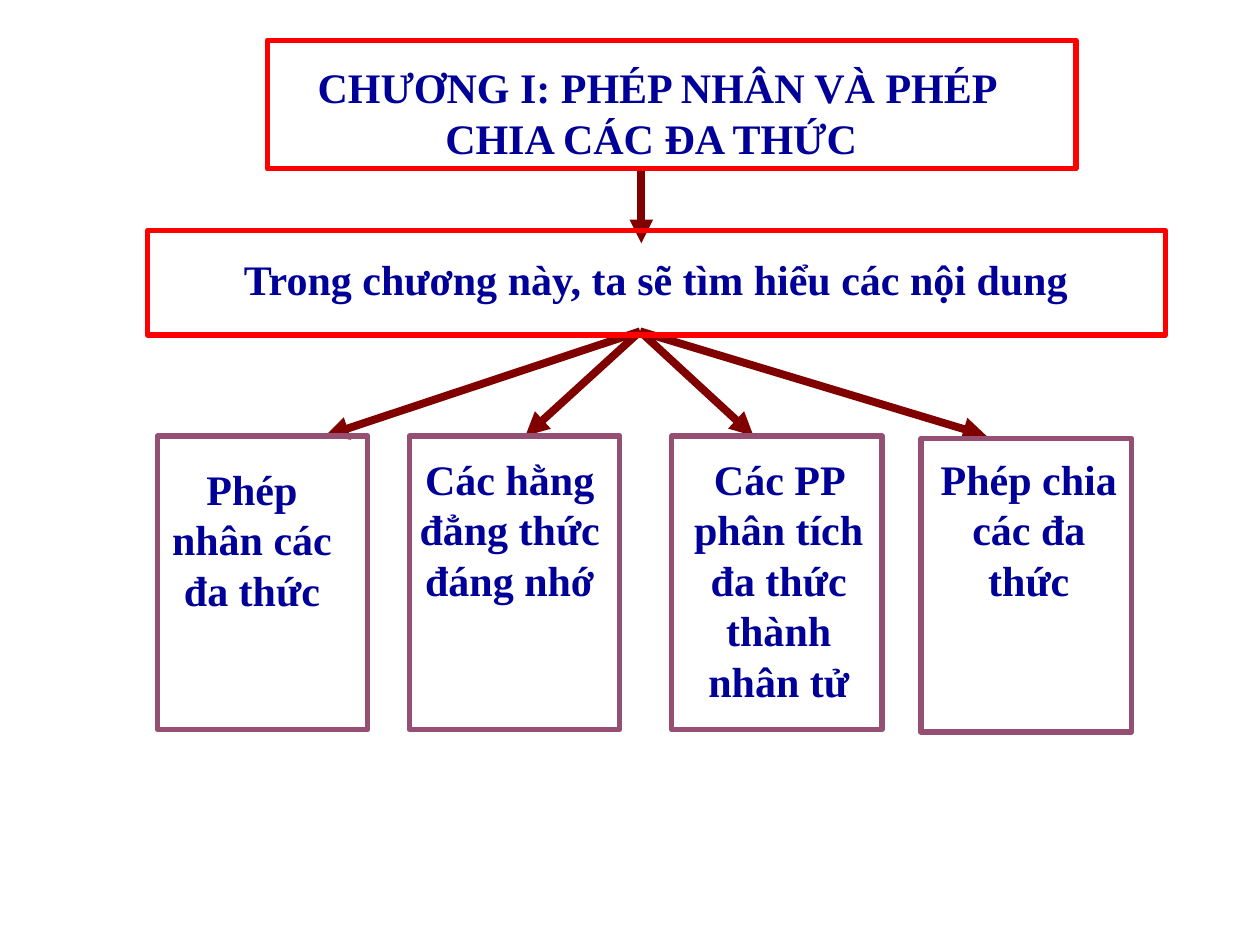
from pptx import Presentation
from pptx.dml.color import RGBColor
from pptx.enum.shapes import MSO_CONNECTOR, MSO_SHAPE
from pptx.enum.text import MSO_ANCHOR, MSO_AUTO_SIZE, PP_ALIGN
from pptx.oxml.ns import qn
from pptx.util import Inches, Pt
from lxml.etree import SubElement

COLORS = {"text": "000099", "heading": "FF0000", "topic": "954F72", "arrow": "800000"}

deck = Presentation()
deck.slide_width, deck.slide_height = Inches(10), Inches(7.5)
page = deck.slides.add_slide(deck.slide_layouts[5])


def write(box, text):
    frame = box.text_frame
    frame.text = text
    frame.word_wrap = True
    frame.auto_size = MSO_AUTO_SIZE.NONE
    frame.vertical_anchor = MSO_ANCHOR.TOP
    paragraph = frame.paragraphs[0]
    paragraph.alignment = PP_ALIGN.CENTER
    font = paragraph.runs[0].font
    font.name, font.size, font.bold = "Times New Roman", Pt(24), True
    font.color.rgb = RGBColor.from_string(COLORS["text"])


def add_arrow(*ends):
    arrow = page.shapes.add_connector(MSO_CONNECTOR.STRAIGHT, *map(Inches, ends))
    arrow.line.color.rgb = RGBColor.from_string(COLORS["arrow"])
    arrow.line.width = Pt(4.5)
    SubElement(arrow.line._get_or_add_ln(), qn("a:tailEnd"), type="triangle")
    SubElement(arrow._element.spPr, qn("a:effectLst"))


# Chapter title and the arrows leading down to the topics
title = page.shapes.title
title.left, title.top, title.width, title.height = map(Inches, (2.42, 0.44, 5.58, 0.9))
write(title, "CHƯƠNG I: PHÉP NHÂN VÀ PHÉP CHIA CÁC ĐA THỨC ")

topic_top = 3.46
add_arrow(5.09, 1.34, 5.09, 1.93)
for arrow_end in (2.58, 4.17, 5.98, 7.83):
    add_arrow(5.08, 2.63, arrow_end, topic_top)

# Frames: left, top, width, height, colour
topic_size = (1.67, 2.33)
frames = [(2.12, 0.32, 6.42, 1.02, "heading"), (1.17, 1.83, 8.08, 0.83, "heading")]
frames += [(left, topic_top, *topic_size, "topic") for left in (1.25, 3.25, 5.33)]
frames.append((7.31, 3.48, *topic_size, "topic"))
for *place, color in frames:
    outline = page.shapes.add_shape(MSO_SHAPE.RECTANGLE, *map(Inches, place))
    outline.shadow.inherit = False
    outline.fill.background()
    outline.line.color.rgb = RGBColor.from_string(COLORS[color])
    outline.line.width = Pt(3)

# Labels: left, top, width, height, text
labels = [
    (1.08, 1.96, 8.25, 0.5, "Trong chương này, ta sẽ tìm hiểu các nội dung"),
    (1.25, 3.63, 1.5, 2.1, "Phép nhân các đa thức"),
    (3.17, 3.55, 1.75, 2.1, "Các hằng đẳng thức đáng nhớ"),
    (5.39, 3.55, 1.58, 2.1, "Các PP phân tích đa thức thành nhân tử"),
    (7.29, 3.55, 1.75, 2.1, "Phép chia các đa thức"),
]
for *place, text in labels:
    write(page.shapes.add_textbox(*map(Inches, place)), text)

deck.save("out.pptx")
